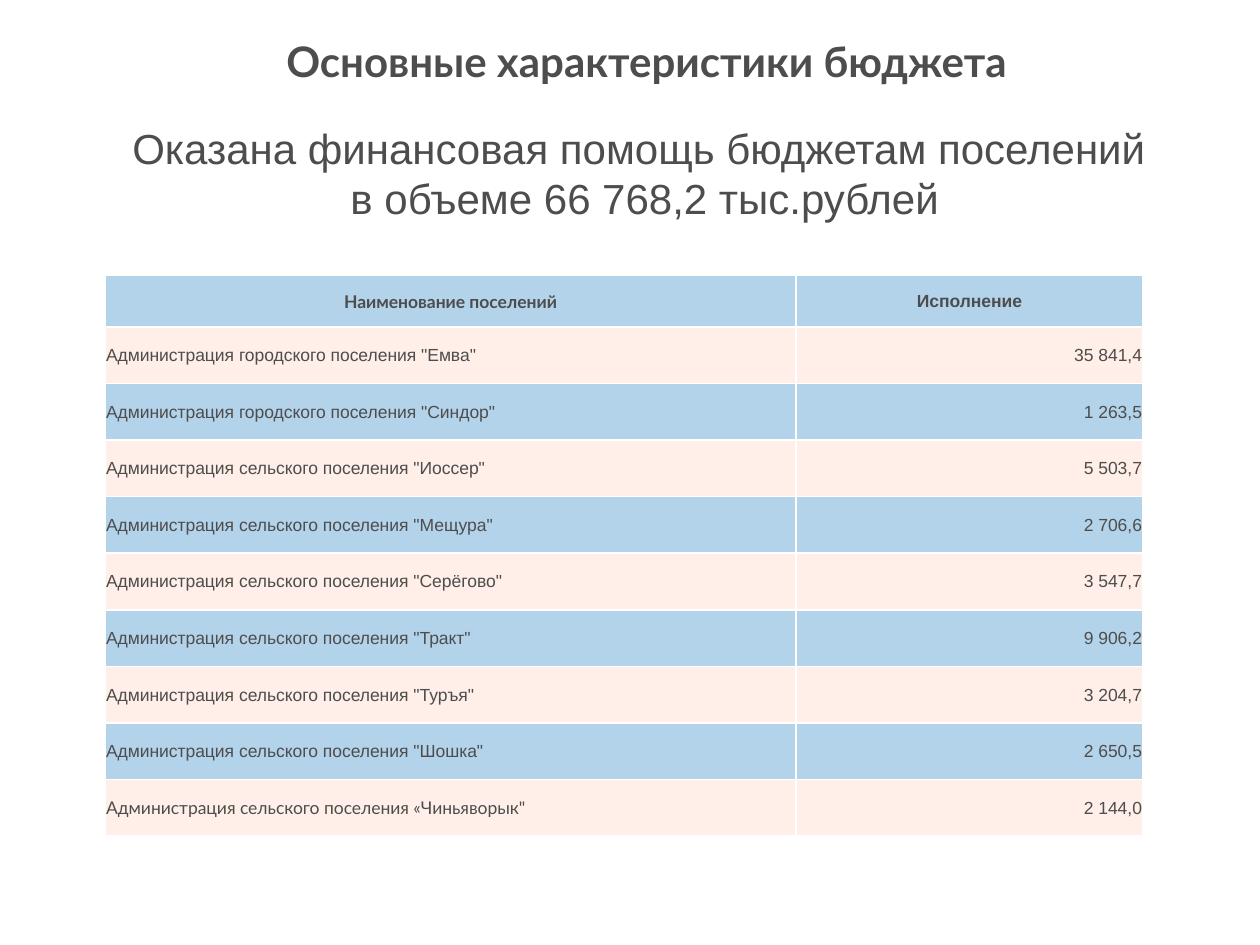
import lxml.etree
import pptx
import pptx.dml.color
import pptx.enum.text
import pptx.oxml.ns
import pptx.util

EMU_PER_PX = 914400 // 126
COLORS = {"text": "4D4D4D", "blue": "B3D3EA", "cream": "FFEFE8", "border": "FFFFFF"}
ALIGN = pptx.enum.text.PP_ALIGN
MIDDLE = pptx.enum.text.MSO_ANCHOR.MIDDLE

TRANSFERS = [
    ('Администрация городского поселения "Емва"', "35 841,4"),
    ('Администрация городского поселения "Синдор"', "1 263,5"),
    ('Администрация сельского поселения "Иоссер"', "5 503,7"),
    ('Администрация сельского поселения "Мещура"', "2 706,6"),
    ('Администрация сельского поселения "Серёгово"', "3 547,7"),
    ('Администрация сельского поселения "Тракт"', "9 906,2"),
    ('Администрация сельского поселения "Туръя"', "3 204,7"),
    ('Администрация сельского поселения "Шошка"', "2 650,5"),
    ('Администрация сельского поселения «Чиньяворык"', "2 144,0"),
]


def px(length):
    return pptx.util.Emu(length * EMU_PER_PX)


def rgb(name):
    return pptx.dml.color.RGBColor.from_string(COLORS[name])


def write(para, text, size, font="Arial", bold=False, align=ALIGN.CENTER):
    para.alignment = align
    span = para.add_run()
    span.text = text
    span.font.name = font
    span.font.size = pptx.util.Pt(size)
    span.font.bold = bold
    span.font.color.rgb = rgb("text")


def add_text(page, left, top, width, height, lines, wrap=True, **style):
    box = page.shapes.add_textbox(px(left), px(top), px(width), px(height))
    frame = box.text_frame
    frame.word_wrap = wrap
    for index, line in enumerate(lines):
        para = frame.add_paragraph() if index else frame.paragraphs[0]
        write(para, line, **style)
    return frame


def set_borders(cell):
    properties = cell._tc.get_or_add_tcPr()
    for index, side in enumerate(("a:lnL", "a:lnR", "a:lnT", "a:lnB")):
        line = lxml.etree.Element(pptx.oxml.ns.qn(side), w=str(pptx.util.Pt(1)))
        fill = lxml.etree.SubElement(line, pptx.oxml.ns.qn("a:solidFill"))
        lxml.etree.SubElement(fill, pptx.oxml.ns.qn("a:srgbClr"), val=COLORS["border"])
        properties.insert(index, line)


def fill_cell(cell, text, fill, **style):
    cell.fill.solid()
    cell.fill.fore_color.rgb = rgb(fill)
    cell.margin_left = cell.margin_right = cell.margin_top = px(1)
    cell.margin_bottom = 0
    cell.vertical_anchor = MIDDLE
    write(cell.text_frame.paragraphs[0], text, 10, **style)
    set_borders(cell)


def add_transfer_table(page, left, top, widths, header_height, body_height):
    frame = page.shapes.add_table(
        len(TRANSFERS) + 1, len(widths), px(left), px(top),
        px(sum(widths)), px(header_height + body_height))
    table = frame.table
    for column, width in zip(table.columns, widths):
        column.width = px(width)
    for row in table.rows:
        row.height = px(body_height) // len(TRANSFERS)
    table.rows[0].height = px(header_height)

    # Header
    fill_cell(table.cell(0, 0), "Наименование поселений", "blue", font="Lato", bold=True)
    fill_cell(table.cell(0, 1), "Исполнение", "blue", bold=True)

    # Settlements in alternating bands; the last name is set in Lato
    for index, (name, amount) in enumerate(TRANSFERS, start=1):
        fill = "cream" if index % 2 else "blue"
        font = "Lato" if index == len(TRANSFERS) else "Arial"
        fill_cell(table.cell(index, 0), name, fill, font=font, align=ALIGN.LEFT)
        fill_cell(table.cell(index, 1), amount, fill, align=ALIGN.RIGHT)


def main():
    deck = pptx.Presentation()
    deck.slide_width, deck.slide_height = px(1260), px(945)
    page = deck.slides.add_slide(deck.slide_layouts[6])

    # Title
    title = add_text(page, 158, 26, 977, 70, ["Основные характеристики бюджета"],
                     size=24, font="Lato", bold=True)
    title.vertical_anchor = MIDDLE

    # Total of the aid
    total = add_text(page, 115, 116, 1048, 115,
                     ["Оказана финансовая помощь бюджетам поселений",
                      " в объеме 66 768,2 тыс.рублей"], wrap=False, size=24)
    total.auto_size = pptx.enum.text.MSO_AUTO_SIZE.SHAPE_TO_FIT_TEXT

    # Aid by settlement
    add_transfer_table(page, 105, 275, (691, 347), 52, 509)

    deck.save("out.pptx")


if __name__ == "__main__":
    main()
